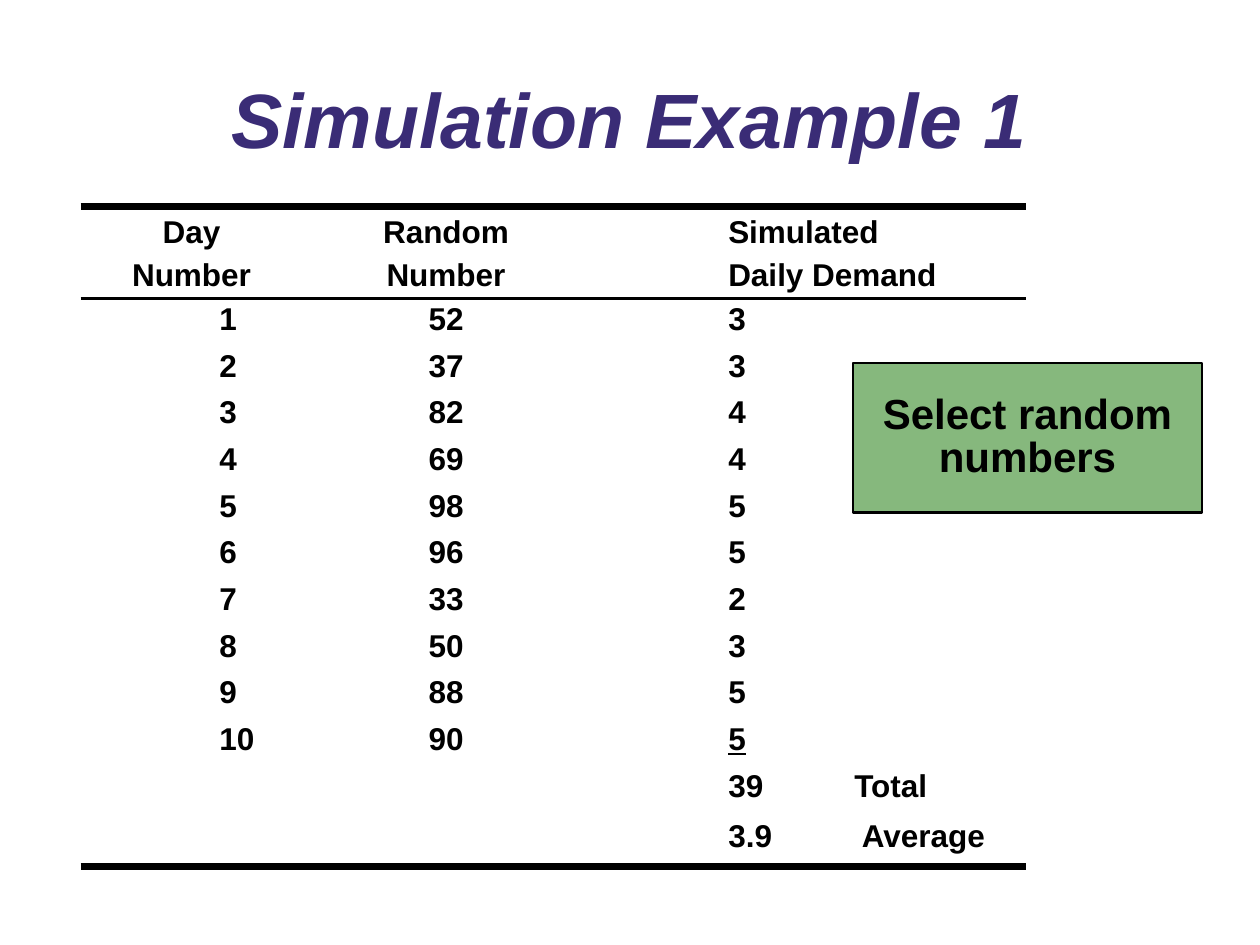
from lxml.etree import SubElement
from pptx import Presentation
from pptx.dml.color import RGBColor
from pptx.enum.shapes import MSO_SHAPE
from pptx.enum.text import MSO_ANCHOR, MSO_AUTO_SIZE, PP_ALIGN
from pptx.oxml.ns import qn
from pptx.util import Inches, Pt

COLORS = {"title": "3A2C76", "ink": "000000", "callout": "86B87D"}
PLAIN_STYLE = "{2D5ABB26-0587-4C30-8999-92F81FD0307C}"
HEADINGS = ["Day\nNumber", "Random\nNumber", "Simulated\nDaily Demand"]
RANDOM_NUMBERS = [52, 37, 82, 69, 98, 96, 33, 50, 88, 90]
DEMANDS = [3, 3, 4, 4, 5, 5, 2, 3, 5, 5]
COLUMN_WIDTHS = [1.76, 2.28, 3.46]
HEADER_HEIGHT, ROW_HEIGHT = 0.73, 0.37


def style(paragraph, size, color, align, spacing):
    paragraph.alignment = align
    paragraph.line_spacing = spacing
    font = paragraph.font
    font.name, font.size, font.bold = "Arial", Pt(size), True
    font.color.rgb = RGBColor.from_string(COLORS[color])


def rule(cell, edge, width):
    line = SubElement(cell._tc.get_or_add_tcPr(), qn(f"a:{edge}"), w=str(Pt(width)))
    fill = SubElement(line, qn("a:solidFill"))
    SubElement(fill, qn("a:srgbClr"), val=COLORS["ink"])


deck = Presentation()
deck.slide_width, deck.slide_height = Inches(10), Inches(7.5)
slide = deck.slides.add_slide(deck.slide_layouts[6])

title = slide.shapes.add_textbox(Inches(0.57), Inches(0.46), Inches(8.85), Inches(1.04)).text_frame
title.word_wrap = True
title.vertical_anchor = MSO_ANCHOR.MIDDLE
title.text = "Simulation Example 1"
style(title.paragraphs[0], 44, "title", PP_ALIGN.CENTER, 0.9)
title.paragraphs[0].font.italic = True

callout = slide.shapes.add_shape(MSO_SHAPE.RECTANGLE, Inches(6.77), Inches(2.88), Inches(2.77), Inches(1.19))
callout.shadow.inherit = False
callout.fill.solid()
callout.fill.fore_color.rgb = RGBColor.from_string(COLORS["callout"])
callout.line.color.rgb = RGBColor.from_string(COLORS["ink"])
callout.line.width = Pt(1.5)
advice = callout.text_frame
advice.word_wrap = True
advice.auto_size = MSO_AUTO_SIZE.SHAPE_TO_FIT_TEXT
advice.margin_left = advice.margin_right = Inches(0.18)
advice.margin_top = advice.margin_bottom = Inches(0.25)
advice.text = "Select random numbers"
style(advice.paragraphs[0], 24, "ink", PP_ALIGN.CENTER, 0.85)

days = [
    [str(day), str(number), str(demand)]
    for day, (number, demand) in enumerate(zip(RANDOM_NUMBERS, DEMANDS), 1)
]
summary = [["", "", "39\t\tTotal"], ["", "", "3.9\t\t Average"]]
rows = [HEADINGS] + days + summary
last = len(rows) - 1

table_frame = slide.shapes.add_table(
    len(rows), len(COLUMN_WIDTHS), Inches(0.64), Inches(1.64),
    Inches(sum(COLUMN_WIDTHS)), Inches(HEADER_HEIGHT + ROW_HEIGHT * last),
)
simulation = table_frame.table
simulation.first_row = simulation.horz_banding = False
simulation._tbl.tblPr.find(qn("a:tableStyleId")).text = PLAIN_STYLE
for column, width in zip(simulation.columns, COLUMN_WIDTHS):
    column.width = Inches(width)

edges = {0: [("lnT", 4.5), ("lnB", 2.25)], last: [("lnB", 4.5)]}
for r, texts in enumerate(rows):
    simulation.rows[r].height = Inches(ROW_HEIGHT if r else HEADER_HEIGHT)
    for c, text in enumerate(texts):
        cell = simulation.cell(r, c)
        for edge, width in edges.get(r, []):
            rule(cell, edge, width)
        cell.fill.background()
        if not text:
            continue
        indented = c == 2 or (c == 0 and r > 0)
        if indented:
            cell.margin_left = Inches(1.1)
        cell.vertical_anchor = MSO_ANCHOR.TOP if r else MSO_ANCHOR.BOTTOM
        cell.text = text
        for paragraph in cell.text_frame.paragraphs:
            align = PP_ALIGN.LEFT if indented else PP_ALIGN.CENTER
            style(paragraph, 18, "ink", align, 0.9 if r else 0.85)
            paragraph.space_after = Pt(7.2)

last_demand = simulation.cell(len(days), 2).text_frame.paragraphs[0]
last_demand.font.underline = True

deck.save("out.pptx")
